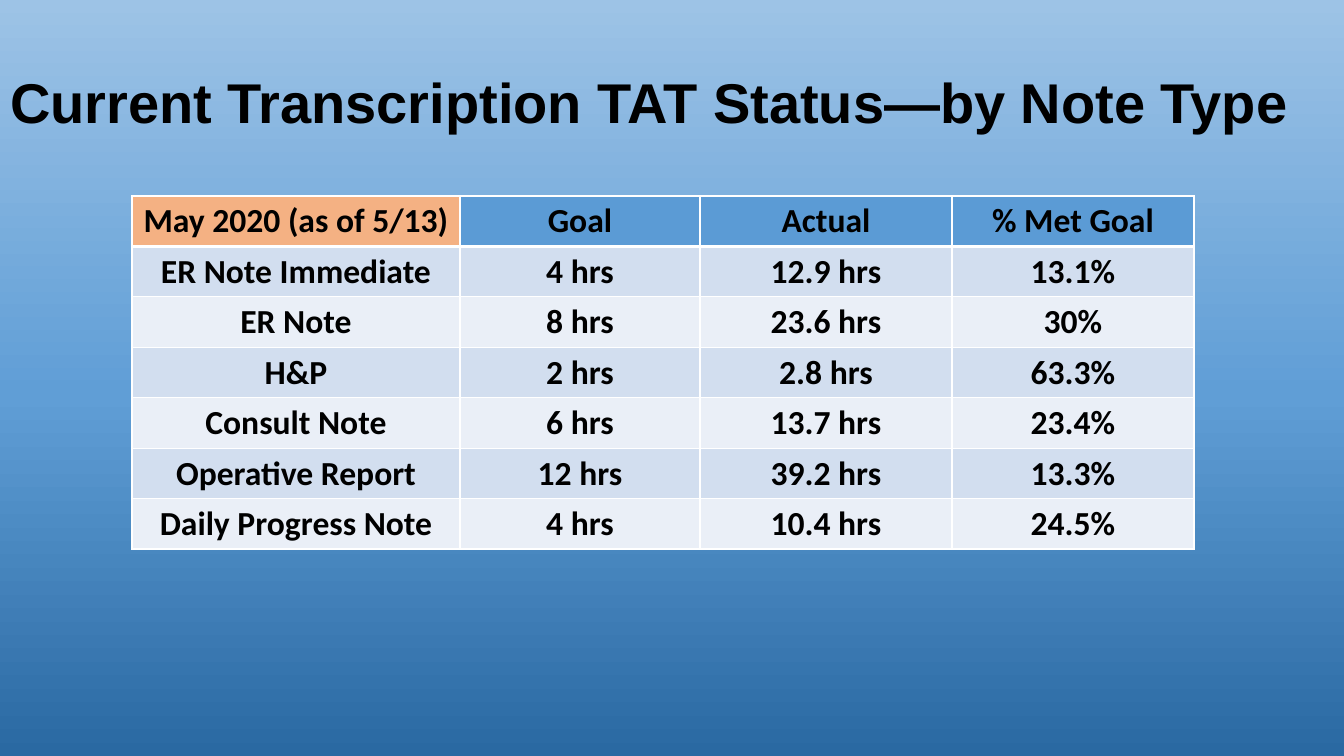
import copy
import dataclasses

import lxml.etree
import pptx
import pptx.dml.color
import pptx.enum.text
import pptx.oxml.ns
import pptx.util

EMU_PER_PX = 914400 / 100.8
TITLE_ONLY_LAYOUT = 5


@dataclasses.dataclass(frozen=True)
class Theme:
    backdrop: tuple = ((0, "2A69A2"), (0.48, "609ED6"), (1, "9DC3E6"))
    ink: str = "000000"
    rule: str = "FFFFFF"
    period: str = "F4B183"
    header: str = "5B9BD5"
    bands: tuple = ("D2DEEF", "EAEFF7")
    title_font: str = "Arial"
    table_font: str = "Calibri"
    title_size: int = 40
    table_size: int = 24
    thin: int = 1
    thick: int = 3


def px(length):
    return pptx.util.Emu(round(length * EMU_PER_PX))


def rgb(code):
    return pptx.dml.color.RGBColor.from_string(code)


class StatusSlide:
    def __init__(self, deck, theme):
        self.theme = theme
        self.slide = deck.slides.add_slide(deck.slide_layouts[TITLE_ONLY_LAYOUT])

    def backdrop(self):
        fill = self.slide.background.fill
        fill.gradient()
        fill.gradient_angle = 90
        first_stop = next(self.slide.element.iter(pptx.oxml.ns.qn("a:gs")))
        first_stop.addnext(copy.deepcopy(first_stop))
        for stop, (position, colour) in zip(fill.gradient_stops, self.theme.backdrop):
            stop.position = position
            stop.color.rgb = rgb(colour)

    def add_text(self, frame, text, font, size, align):
        paragraph = frame.paragraphs[0]
        paragraph.alignment = align
        run = paragraph.add_run()
        run.text = text
        run.font.name = font
        run.font.size = pptx.util.Pt(size)
        run.font.bold = True
        run.font.color.rgb = rgb(self.theme.ink)

    def title(self, text, left, top, width, height):
        heading = self.slide.shapes.title
        heading.left, heading.top = px(left), px(top)
        heading.width, heading.height = px(width), px(height)
        frame = heading.text_frame
        frame.word_wrap = True
        frame.auto_size = pptx.enum.text.MSO_AUTO_SIZE.SHAPE_TO_FIT_TEXT
        frame.vertical_anchor = pptx.enum.text.MSO_ANCHOR.TOP
        self.add_text(frame, text, self.theme.title_font, self.theme.title_size,
                      pptx.enum.text.PP_ALIGN.LEFT)

    def cell_rules(self, cell, top, bottom):
        properties = cell._tc.get_or_add_tcPr()
        widths = {"lnL": self.theme.thin, "lnR": self.theme.thin, "lnT": top, "lnB": bottom}
        for place, (side, points) in enumerate(widths.items()):
            line = lxml.etree.Element(pptx.oxml.ns.qn("a:" + side), w=str(pptx.util.Pt(points)))
            solid = lxml.etree.SubElement(line, pptx.oxml.ns.qn("a:solidFill"))
            lxml.etree.SubElement(solid, pptx.oxml.ns.qn("a:srgbClr"), val=self.theme.rule)
            properties.insert(place, line)

    def cell_colour(self, row, column):
        if row > 0:
            return self.theme.bands[(row - 1) % 2]
        return self.theme.header if column else self.theme.period

    def table(self, rows, left, top, column_widths, row_height):
        theme = self.theme
        grid = self.slide.shapes.add_table(
            len(rows), len(column_widths), px(left), px(top),
            px(sum(column_widths)), px(row_height * len(rows))).table
        for column, width in zip(grid.columns, column_widths):
            column.width = px(width)
        for r, entries in enumerate(rows):
            grid.rows[r].height = px(row_height)
            for c, entry in enumerate(entries):
                cell = grid.cell(r, c)
                cell.fill.solid()
                cell.fill.fore_color.rgb = rgb(self.cell_colour(r, c))
                if r == 0:
                    cell.vertical_anchor = pptx.enum.text.MSO_ANCHOR.MIDDLE
                self.cell_rules(cell, theme.thick if r == 1 else theme.thin,
                                theme.thick if r == 0 else theme.thin)
                self.add_text(cell.text_frame, entry, theme.table_font, theme.table_size,
                              pptx.enum.text.PP_ALIGN.CENTER)


TURNAROUND = [
    ("May 2020 (as of 5/13)", "Goal", "Actual", "% Met Goal"),
    ("ER Note Immediate", "4 hrs", "12.9 hrs", "13.1%"),
    ("ER Note", "8 hrs", "23.6 hrs", "30%"),
    ("H&P", "2 hrs", "2.8 hrs", "63.3%"),
    ("Consult Note", "6 hrs", "13.7 hrs", "23.4%"),
    ("Operative Report", "12 hrs", "39.2 hrs", "13.3%"),
    ("Daily Progress Note", "4 hrs", "10.4 hrs", "24.5%"),
]


def main():
    deck = pptx.Presentation()
    deck.slide_width, deck.slide_height = px(1344), px(756)
    status = StatusSlide(deck, Theme())

    # Background
    status.backdrop()

    # Turnaround times by note type
    status.table(TURNAROUND, left=132, top=196,
                 column_widths=(328, 240, 252, 242), row_height=50)

    # Heading
    status.title("Current Transcription TAT Status—by Note Type",
                 left=0, top=62, width=1301, height=78)

    deck.save("out.pptx")


if __name__ == "__main__":
    main()
